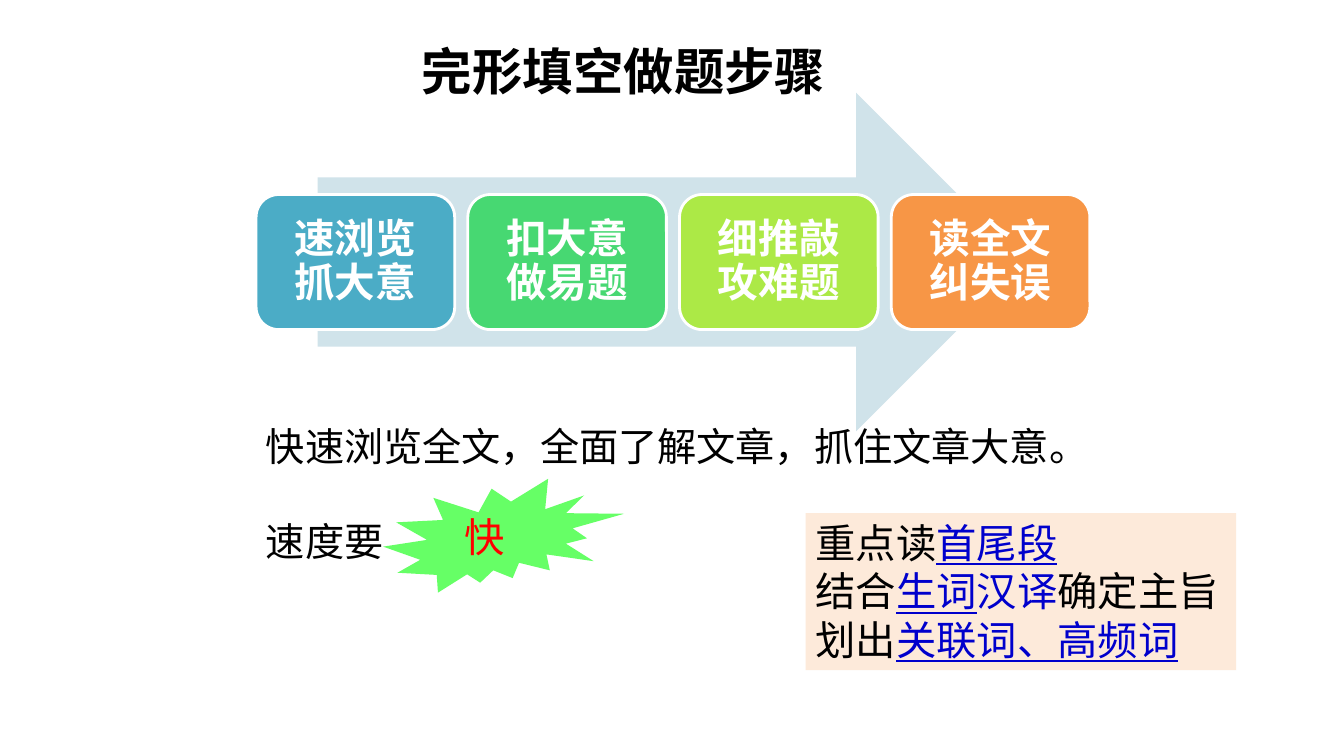
import pptx
import pptx.dml.color
import pptx.enum.lang
import pptx.enum.shapes
import pptx.enum.text
import pptx.util

Inches = pptx.util.Inches
SHAPE = pptx.enum.shapes.MSO_SHAPE
ALIGN = pptx.enum.text.PP_ALIGN
ANCHOR = pptx.enum.text.MSO_ANCHOR

LEFT = 2.54
CARD_TOP, CARD_WIDTH, CARD_HEIGHT, CARD_PITCH = 1.93, 1.97, 1.34, 2.1


def format_run(run, size, font_name, color, bold=False, underline=False):
    run.font.size = pptx.util.Pt(size)
    run.font.name = font_name
    run.font.color.rgb = pptx.dml.color.RGBColor.from_string(color)
    run.font.bold = bold
    run.font.underline = underline
    run.font.language_id = pptx.enum.lang.MSO_LANGUAGE_ID.SIMPLIFIED_CHINESE


def add_filled(shapes, kind, left, top, width, height, fill):
    shape = shapes.add_shape(kind, Inches(left), Inches(top), Inches(width), Inches(height))
    shape.shadow.inherit = False
    shape.fill.solid()
    shape.fill.fore_color.rgb = pptx.dml.color.RGBColor.from_string(fill)
    shape.line.fill.background()
    return shape


presentation = pptx.Presentation()
presentation.slide_width, presentation.slide_height = Inches(13.33), Inches(7.5)
slide = presentation.slides.add_slide(presentation.slide_layouts[5])

# Title
title = slide.shapes.title
title.left, title.top = Inches(3.04), Inches(0.35)
title.width, title.height = Inches(6.29), Inches(0.7)
title.text_frame.text = "完形填空做题步骤"
title.text_frame.paragraphs[0].alignment = ALIGN.CENTER
format_run(title.text_frame.paragraphs[0].runs[0], 36, "Calibri", "000000", bold=True)

# Explanation of the first step
explanation = slide.shapes.add_textbox(Inches(LEFT), Inches(4.14), Inches(9.14), Inches(1.51))
explanation.text_frame.word_wrap = True
explanation.text_frame.text = "快速浏览全文，全面了解文章，抓住文章大意。\n速度要"
explanation.text_frame.paragraphs[1].space_before = pptx.util.Pt(34)
for paragraph in explanation.text_frame.paragraphs:
    format_run(paragraph.runs[0], 28, "Times New Roman", "000000")

# Starburst with its word
burst = slide.shapes.add_group_shape()
add_filled(burst.shapes, SHAPE.EXPLOSION2, 3.8, 4.75, 2.39, 1.13, "66FF66")
word = burst.shapes.add_textbox(Inches(4.51), Inches(5.03), Inches(0.98), Inches(0.59))
word.text_frame.word_wrap = True
word.text_frame.text = "快"
format_run(word.text_frame.paragraphs[0].runs[0], 28.8, "Calibri", "FF0000")

# Reading tips: text, highlighted, underlined
tips = [
    [("重点读", False, False), ("首尾段", True, True)],
    [("结合", False, False), ("生词", True, True), ("汉译", True, False), ("确定主旨", False, False)],
    [("划出", False, False), ("关联词、高频词", True, True)],
]
tip_box = add_filled(slide.shapes, SHAPE.RECTANGLE, 7.99, 5.09, 4.27, 1.56, "FDEADA")
tip_box.text_frame.word_wrap = True
tip_box.text_frame.vertical_anchor = ANCHOR.TOP
for index, tip in enumerate(tips):
    paragraph = tip_box.text_frame.add_paragraph() if index else tip_box.text_frame.paragraphs[0]
    paragraph.alignment = ALIGN.LEFT
    for text, highlighted, underlined in tip:
        run = paragraph.add_run()
        run.text = text
        color = "0000CC" if highlighted else "000000"
        format_run(run, 28.8, "Noto Sans CJK SC", color, underline=underlined)

# Process arrow with four step cards
process = slide.shapes.add_group_shape()
add_filled(process.shapes, SHAPE.RIGHT_ARROW, 3.15, 0.92, 7.02, 3.36, "D0E3EA")
steps = [
    ("速浏览抓大意", "4BACC6"),
    ("扣大意做易题", "47D872"),
    ("细推敲攻难题", "ACE946"),
    ("读全文纠失误", "F79646"),
]
for column, (text, fill) in enumerate(steps):
    card = add_filled(process.shapes, SHAPE.ROUNDED_RECTANGLE, LEFT + column * CARD_PITCH,
                      CARD_TOP, CARD_WIDTH, CARD_HEIGHT, fill)
    card.line.color.rgb = pptx.dml.color.RGBColor.from_string("FFFFFF")
    card.line.width = pptx.util.Pt(2)
    frame = card.text_frame
    frame.word_wrap = True
    frame.vertical_anchor = ANCHOR.MIDDLE
    frame.margin_left = frame.margin_right = Inches(0.12)
    frame.margin_top = frame.margin_bottom = Inches(0.12)
    frame.text = text
    paragraph = frame.paragraphs[0]
    paragraph.alignment = ALIGN.CENTER
    paragraph.line_spacing = 0.9
    format_run(paragraph.runs[0], 29, "Calibri", "FFFFFF", bold=True)

presentation.save("out.pptx")
